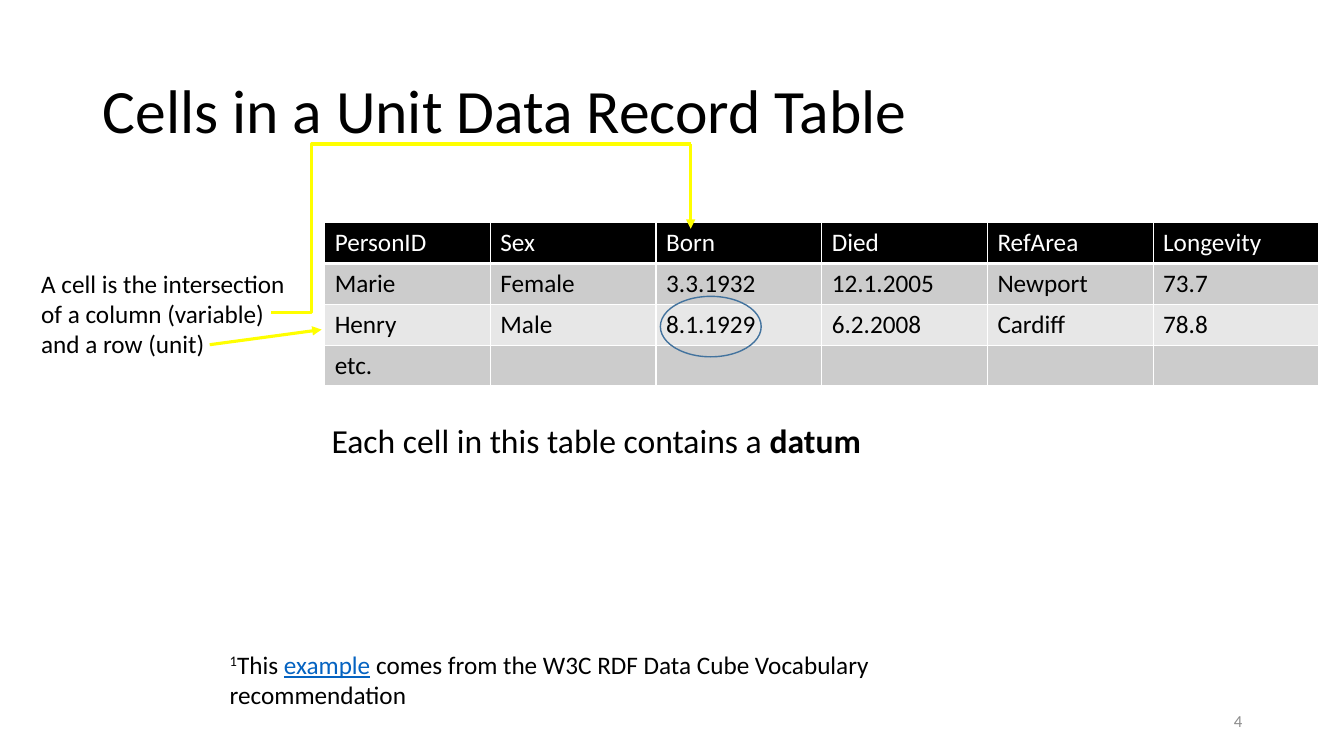
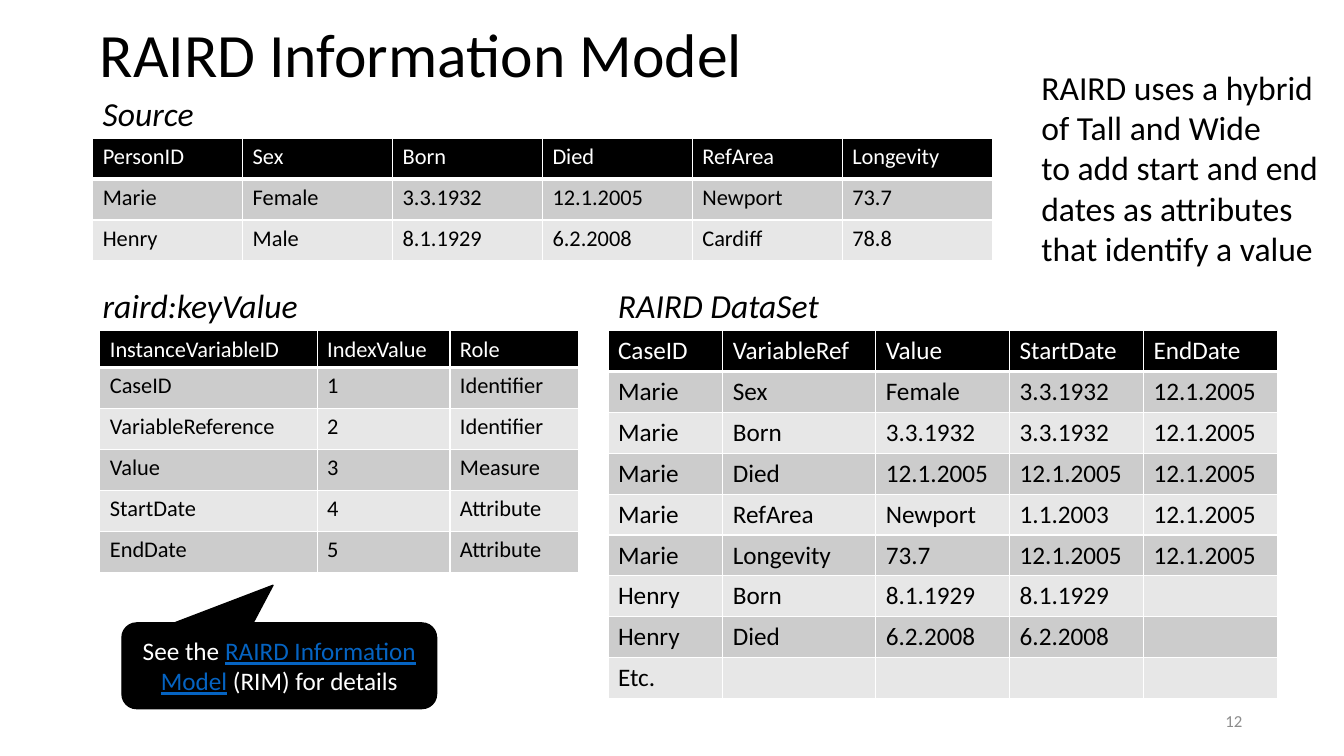
from lxml.etree import SubElement
from pptx import Presentation
from pptx.dml.color import RGBColor
from pptx.enum.shapes import MSO_CONNECTOR as CONN, MSO_SHAPE as SHAPE
from pptx.enum.text import MSO_ANCHOR as ANCHOR, PP_ALIGN as ALIGN
from pptx.oxml.ns import qn
from pptx.util import Inches, Pt

BLACK = RGBColor(0x00, 0x00, 0x00)
WHITE = RGBColor(0xFF, 0xFF, 0xFF)
BAND_DARK = RGBColor(0xCC, 0xCC, 0xCC)
BAND_LIGHT = RGBColor(0xE7, 0xE7, 0xE7)
YELLOW = RGBColor(0xFF, 0xFF, 0x00)
OUTLINE_BLUE = RGBColor(0x43, 0x73, 0x9E)
LINK_BLUE = RGBColor(0x05, 0x63, 0xC1)
NUMBER_GREY = RGBColor(0x8C, 0x8C, 0x8C)
FONT = "Calibri"

LINK = {"color": LINK_BLUE, "underline": True}
HEADERS = ["PersonID", "Sex", "Born", "Died", "RefArea", "Longevity"]
PEOPLE = [
    ["Marie", "Female", "3.3.1932", "12.1.2005", "Newport", "73.7"],
    ["Henry", "Male", "8.1.1929", "6.2.2008", "Cardiff", "78.8"],
]
KEY_VALUES = [
    ["InstanceVariableID", "IndexValue", "Role"],
    ["CaseID", "1", "Identifier"],
    ["VariableReference", "2", "Identifier"],
    ["Value", "3", "Measure"],
    ["StartDate", "4", "Attribute"],
    ["EndDate", "5", "Attribute"],
]
DATASET = [
    ["CaseID", "VariableRef", "Value", "StartDate", "EndDate"],
    ["Marie", "Sex", "Female", "3.3.1932", "12.1.2005"],
    ["Marie", "Born", "3.3.1932", "3.3.1932", "12.1.2005"],
    ["Marie", "Died", "12.1.2005", "12.1.2005", "12.1.2005"],
    ["Marie", "RefArea", "Newport", "1.1.2003", "12.1.2005"],
    ["Marie", "Longevity", "73.7", "12.1.2005", "12.1.2005"],
    ["Henry", "Born", "8.1.1929", "8.1.1929", ""],
    ["Henry", "Died", "6.2.2008", "6.2.2008", ""],
    ["Etc.", "", "", "", ""],
]


def inches(box):
    return [Inches(v) for v in box]


def style_run(r, size, color=BLACK, bold=False, italic=False, underline=False,
              superscript=False):
    f = r.font
    f.name, f.size, f.bold, f.italic = FONT, Pt(size), bold, italic
    f.underline = underline
    f.color.rgb = color
    if superscript:
        r._r.get_or_add_rPr().set("baseline", "30000")


def write(tf, paragraphs, size, align=ALIGN.LEFT, anchor=ANCHOR.TOP,
          spacing=None, **style):
    """Fill a text frame; each paragraph is a list of (text, style) runs."""
    tf.word_wrap = True
    tf.vertical_anchor = anchor
    for i, runs in enumerate(paragraphs):
        p = tf.add_paragraph() if i else tf.paragraphs[0]
        p.alignment, p.line_spacing = align, spacing
        for text, own in runs:
            r = p.add_run()
            r.text = text
            style_run(r, size, **{**style, **own})


def add_text(s, box, paragraphs, size, **options):
    write(s.shapes.add_textbox(*inches(box)).text_frame, paragraphs, size,
          **options)


def add_frame(prs, title, title_box, number):
    """Start a slide with its title and slide number."""
    s = prs.slides.add_slide(prs.slide_layouts[6])
    add_text(s, title_box, [[(title, {})]], 44, anchor=ANCHOR.MIDDLE,
             spacing=0.9)
    add_text(s, (9.42, 6.95, 3, 0.4), [[(str(number), {})]], 12,
             align=ALIGN.RIGHT, anchor=ANCHOR.MIDDLE, color=NUMBER_GREY)
    return s


def set_borders(cell, bottom=1):
    tc_pr = cell._tc.get_or_add_tcPr()
    for side, width in (("L", 1), ("R", 1), ("T", 1), ("B", bottom)):
        ln = SubElement(tc_pr, qn(f"a:ln{side}"), w=str(Pt(width)))
        fill = SubElement(ln, qn("a:solidFill"))
        SubElement(fill, qn("a:srgbClr"), val=str(WHITE))


def add_banded_table(s, box, rows, size, weights=None, header_h=None):
    """Table with a black header; weights share out the width of the box."""
    x, y, w, h = box
    weights = weights or [1] * len(rows[0])
    header_h = header_h or h / len(rows)
    row_h = (h - header_h) / (len(rows) - 1)
    table = s.shapes.add_table(len(rows), len(weights), *inches(box)).table
    table.first_row = table.horz_banding = False
    for col, weight in zip(table.columns, weights):
        col.width = Inches(w * weight / sum(weights))
    for i, values in enumerate(rows):
        table.rows[i].height = Inches(row_h if i else header_h)
        fill = (BAND_DARK if i % 2 else BAND_LIGHT) if i else BLACK
        for j, value in enumerate(values):
            cell = table.cell(i, j)
            set_borders(cell, bottom=1 if i else 3)
            cell.fill.solid()
            cell.fill.fore_color.rgb = fill
            if value:
                cell.text = value
                style_run(cell.text_frame.paragraphs[0].runs[0], size,
                          color=BLACK if i else WHITE)


def add_line(s, start, end, kind=CONN.STRAIGHT, arrow=True):
    c = s.shapes.add_connector(kind, *inches(start + end))
    c.line.color.rgb = YELLOW
    c.line.width = Pt(2.25)
    if arrow:
        SubElement(c.line._get_or_add_ln(), qn("a:tailEnd"), type="triangle")
    SubElement(c._element.spPr, qn("a:effectLst"))
    return c


def add_cell_pointers(s, corner):
    """Circle one cell and point at its column and its row."""
    x, y = corner
    circle = s.shapes.add_shape(SHAPE.OVAL, *inches((x + 3.33, y + 0.73, 1, 0.6)))
    circle.shadow.inherit = False
    circle.fill.background()
    circle.line.color.rgb = OUTLINE_BLUE
    circle.line.width = Pt(1)

    bend = (x + 3.63, y - 0.78)
    elbow = add_line(s, (x - 0.53, y + 0.89), bend, CONN.ELBOW, arrow=False)
    av = elbow._element.spPr.find(qn("a:prstGeom")).get_or_add_avLst()
    SubElement(av, qn("a:gd"), name="adj1", fmla="val 9700")
    add_line(s, bend, (bend[0], y + 0.06))
    add_line(s, (x - 1.14, y + 1.21), (x - 0.03, y + 1.06))


def add_captioned_table(s, caption, box, rows, size, caption_x=None, **options):
    x, y, _, _ = box
    add_banded_table(s, box, rows, size, **options)
    add_text(s, (caption_x or x, y - 0.5, 2.6, 0.5), [[(caption, {})]], 24,
             italic=True)


def add_callout(s, box):
    sp = s.shapes.add_shape(SHAPE.ROUNDED_RECTANGULAR_CALLOUT, *inches(box))
    for i, value in enumerate((-0.02, -0.94, 0.17)):
        sp.adjustments[i] = value
    sp.shadow.inherit = False
    sp.fill.solid()
    sp.fill.fore_color.rgb = BLACK
    sp.line.color.rgb = BLACK
    sp.line.width = Pt(1)
    write(sp.text_frame,
          [[("See the ", {}), ("RAIRD Information Model", LINK),
            (" (RIM) for details", {})]],
          18, align=ALIGN.CENTER, anchor=ANCHOR.MIDDLE, color=WHITE)


def build_cells_slide(prs):
    s = add_frame(prs, "Cells in a Unit Data Record Table",
                  (0.92, 0.4, 11.5, 1.45), 4)
    x, y = 3.22, 2.21
    add_banded_table(s, (x, y, 9.86, 1.62),
                     [HEADERS, *PEOPLE, ["etc."] + [""] * 5], 18)
    add_text(s, (2.18, 6.39, 6.67, 0.71),
             [[("1", {"superscript": True}), ("This ", {}), ("example", LINK),
               (" comes from the W3C RDF Data Cube Vocabulary recommendation",
                {})]], 18)
    add_text(s, (0.31, 2.61, 2.87, 1.31),
             [[("A cell is the intersection of a column (variable)", {})],
              [("and a row (unit)", {})]], 18)
    add_cell_pointers(s, (x, y))
    add_text(s, (3.19, 4.12, 5.52, 0.5),
             [[("Each cell in this table contains a ", {}),
               ("datum", {"bold": True})]], 24)


def build_model_slide(prs):
    s = add_frame(prs, "RAIRD Information Model", (0.89, 0.03, 9.22, 1.09), 12)
    left = 0.92
    add_captioned_table(s, "Source", (left, 1.37, 8.92, 1.22),
                        [HEADERS, *PEOPLE], 16)
    add_captioned_table(s, "raird:keyValue", (0.99, 3.28, 4.75, 2.39),
                        KEY_VALUES, 16, caption_x=left,
                        weights=[2.16, 1.32, 1.28], header_h=0.36)
    add_captioned_table(s, "RAIRD DataSet", (6.03, 3.28, 6.64, 3.65), DATASET,
                        18, weights=[1.14, 1.52, 1.33, 1.33, 1.33])
    add_callout(s, (1.21, 6.18, 3.12, 0.85))
    add_text(s, (10.23, 0.61, 3.11, 2.12),
             [[("RAIRD uses a hybrid of Tall and Wide", {})],
              [("to add start and end dates as attributes that identify a value",
                {})]], 24)


def main():
    prs = Presentation()
    prs.slide_width, prs.slide_height = Inches(13.33), Inches(7.5)
    build_cells_slide(prs)
    build_model_slide(prs)
    prs.save("out.pptx")


if __name__ == "__main__":
    main()
